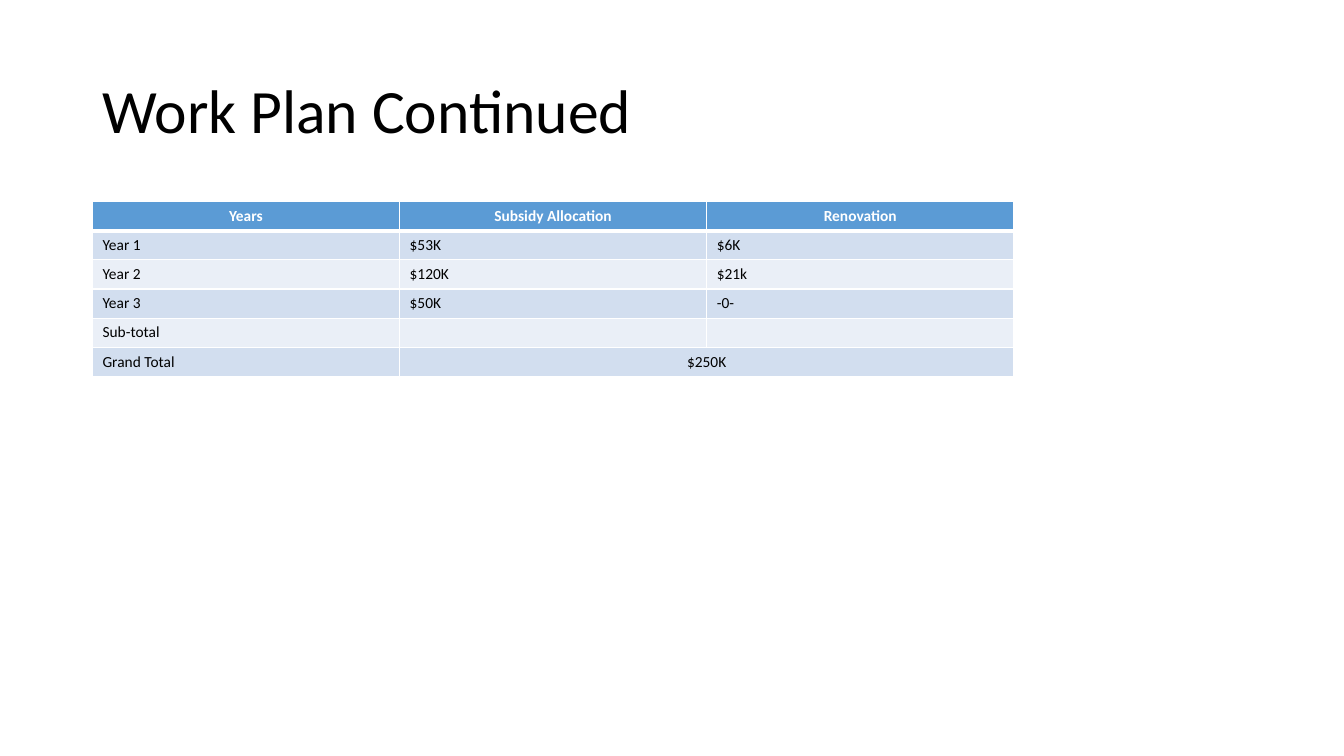
from lxml import etree
from pptx import Presentation
from pptx import util as u
from pptx.dml import color
from pptx.enum import text
from pptx.oxml import ns

HEADINGS = ["Years", "Subsidy Allocation", "Renovation"]
PLAN = [
    ["Year 1", "$53K", "$6K"],
    ["Year 2", "$120K", "$21k"],
    ["Year 3", "$50K", "-0-"],
    ["Sub-total", "", ""],
    ["Grand Total", "$250K", ""],
]


def rgb(value):
    return color.RGBColor.from_string(value)


class SlideBuilder:
    """Holds the slide style and draws each kind of element."""

    font = "Calibri"
    black, white = "000000", "FFFFFF"
    header_fill = "5B9BD5"
    band_fills = ["D2DEEF", "EAEFF7"]
    table_size = 11

    def __init__(self, presentation):
        self.slide = presentation.slides.add_slide(presentation.slide_layouts[5])
        self.slide.background.fill.solid()
        self.slide.background.fill.fore_color.rgb = rgb(self.white)

    def run(self, paragraph, words, size, ink, bold=False):
        run = paragraph.add_run()
        run.text = words
        run.font.name = self.font
        run.font.size = u.Pt(size)
        run.font.bold = bold
        run.font.color.rgb = rgb(ink)

    def title(self, words, left, top, width, height):
        shape = self.slide.shapes.title
        shape.left, shape.top = u.Cm(left), u.Cm(top)
        shape.width, shape.height = u.Cm(width), u.Cm(height)
        frame = shape.text_frame
        frame.word_wrap = True
        frame.auto_size = text.MSO_AUTO_SIZE.NONE
        frame.vertical_anchor = text.MSO_ANCHOR.MIDDLE
        paragraph = frame.paragraphs[0]
        paragraph.alignment = text.PP_ALIGN.LEFT
        paragraph.line_spacing = 0.9
        self.run(paragraph, words, 44, self.black)

    def borders(self, cell, top, bottom):
        properties = cell._tc.get_or_add_tcPr()
        for side, width in zip("LRTB", (1, 1, top, bottom)):
            line = etree.SubElement(properties, ns.qn(f"a:ln{side}"), w=str(u.Pt(width)))
            fill = etree.SubElement(line, ns.qn("a:solidFill"))
            etree.SubElement(fill, ns.qn("a:srgbClr"), val=self.white)

    def cell(self, cell, words, row, centred):
        header = row == 0
        self.borders(cell, 3 if row == 1 else 1, 3 if header else 1)
        cell.fill.solid()
        fill = self.header_fill if header else self.band_fills[(row - 1) % 2]
        cell.fill.fore_color.rgb = rgb(fill)
        paragraph = cell.text_frame.paragraphs[0]
        paragraph.alignment = text.PP_ALIGN.CENTER if centred else text.PP_ALIGN.LEFT
        if words:
            ink = self.white if header else self.black
            self.run(paragraph, words, self.table_size, ink, header)
        else:
            size = str(self.table_size * 100)
            etree.SubElement(paragraph._p, ns.qn("a:endParaRPr"), sz=size)

    def table(self, rows, left, top, column_width, row_height):
        columns = len(rows[0])
        table = self.slide.shapes.add_table(
            len(rows), columns, u.Cm(left), u.Cm(top),
            u.Cm(column_width * columns), u.Cm(row_height * len(rows))).table
        for column in table.columns:
            column.width = u.Cm(column_width)
        for table_row in table.rows:
            table_row.height = u.Cm(row_height)
        last = len(rows) - 1
        table.cell(last, 1).merge(table.cell(last, columns - 1))
        for row, entries in enumerate(rows):
            for column, words in enumerate(entries):
                centred = row == 0 or (row == last and column > 0)
                self.cell(table.cell(row, column), words, row, centred)


def main():
    presentation = Presentation()
    presentation.slide_width = u.Cm(33.87)
    presentation.slide_height = u.Cm(19.05)
    builder = SlideBuilder(presentation)
    builder.title("Work Plan Continued", 2.33, 1.01, 29.21, 3.68)
    builder.table([HEADINGS] + PLAN, 2.33, 5.08, 7.74, 0.73)
    presentation.save("out.pptx")


if __name__ == "__main__":
    main()
